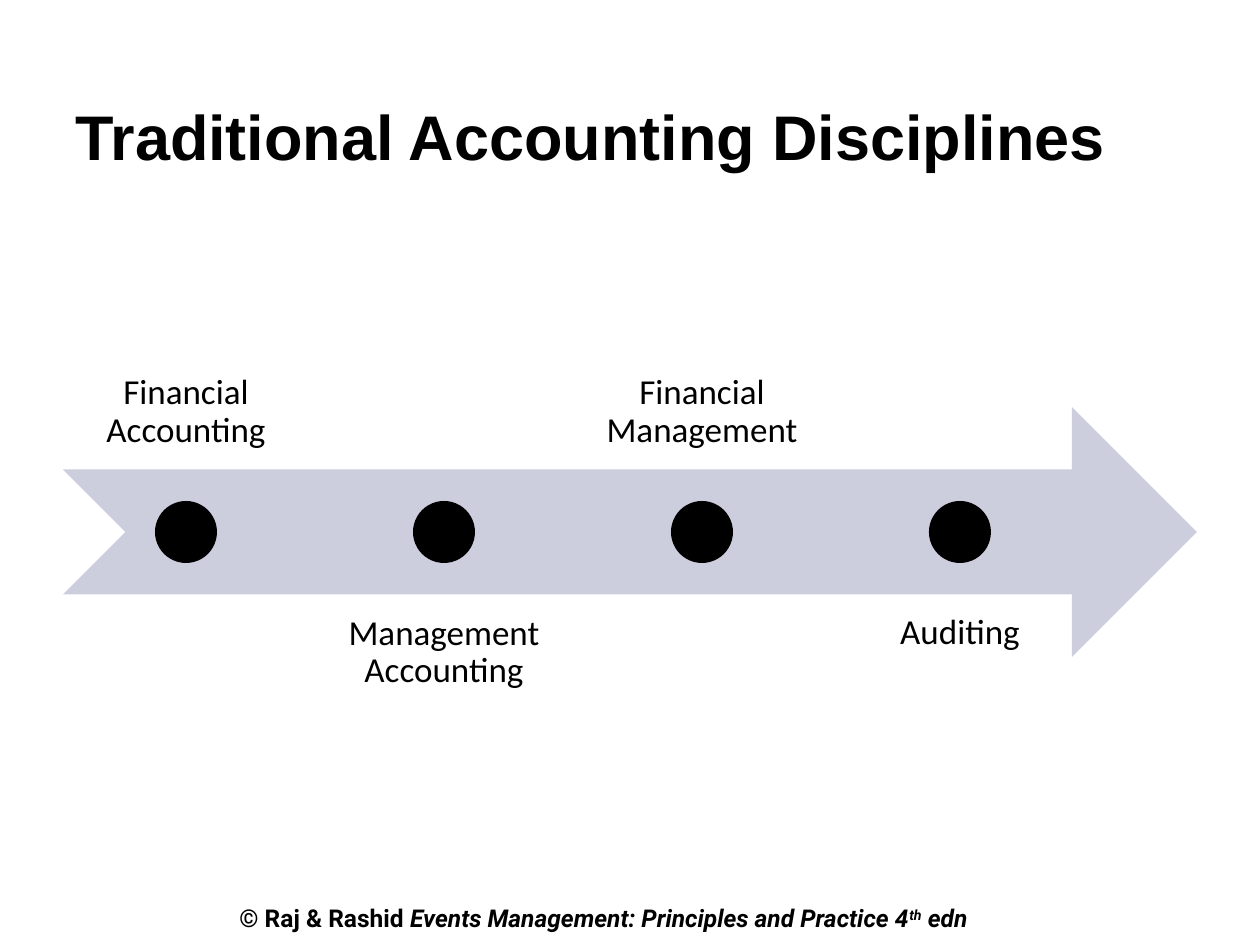
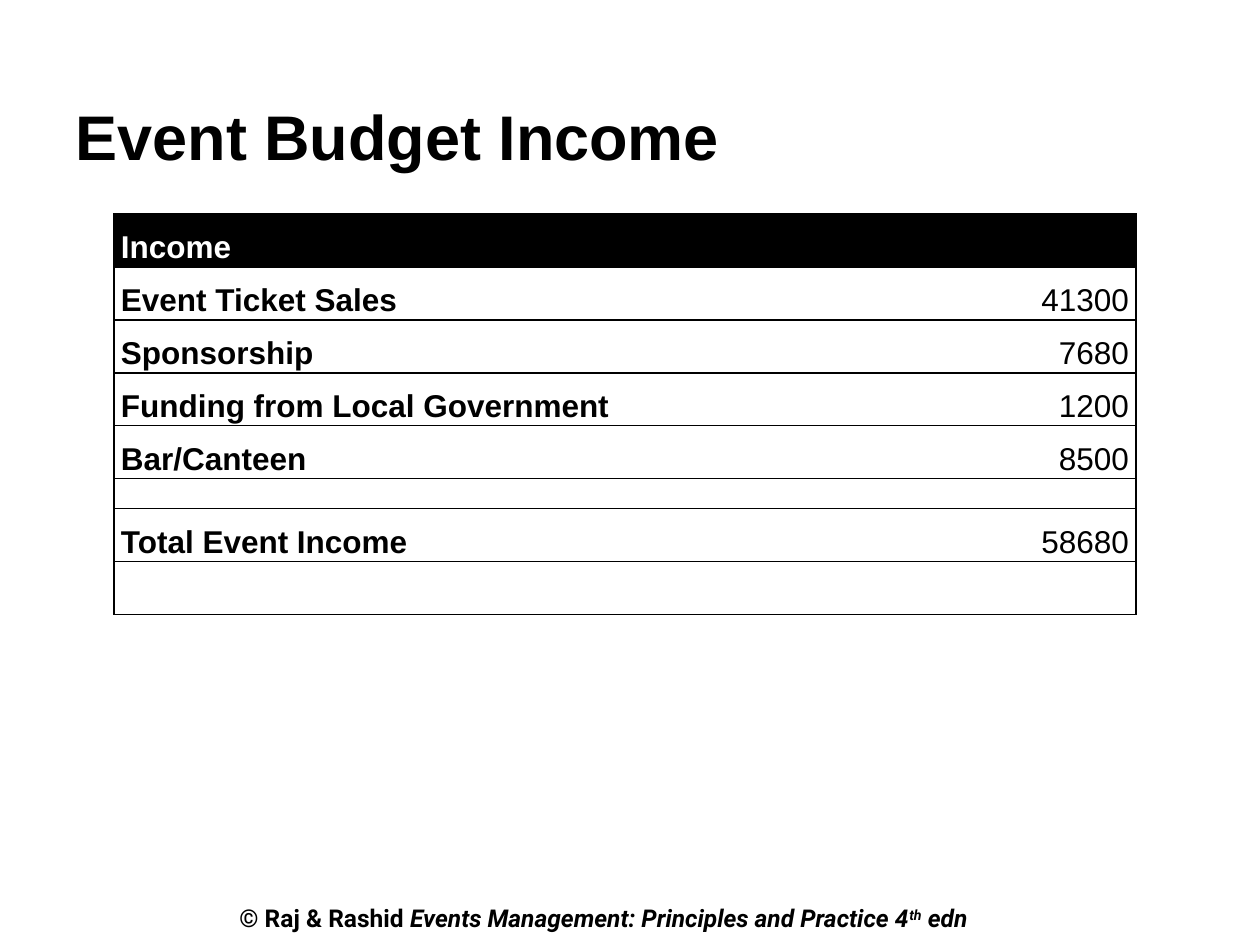
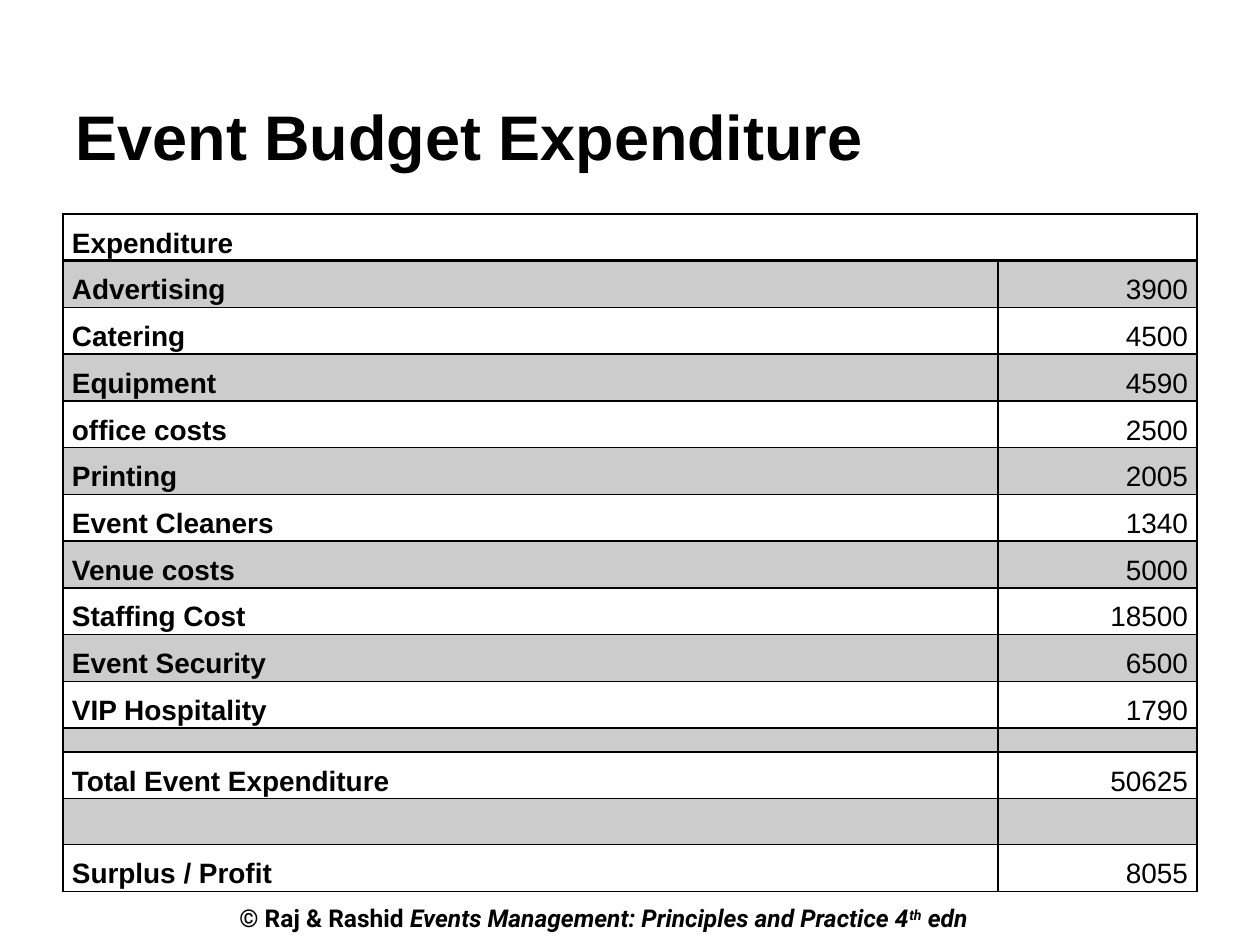
import lxml.etree
import pptx
import pptx.dml.color
import pptx.enum.shapes
import pptx.enum.text
import pptx.oxml.ns
import pptx.util

BLACK = pptx.dml.color.RGBColor(0x00, 0x00, 0x00)
WHITE = pptx.dml.color.RGBColor(0xFF, 0xFF, 0xFF)
GREY = pptx.dml.color.RGBColor(0xCC, 0xCC, 0xCC)
LAVENDER = pptx.dml.color.RGBColor(0xCC, 0xCD, 0xDD)

ALIGN = pptx.enum.text.PP_ALIGN
ANCHOR = pptx.enum.text.MSO_ANCHOR
SHAPE = pptx.enum.shapes.MSO_SHAPE
EMU_PER_PX = 914400 / 126

DISCIPLINES = [
    "Financial Accounting",
    "Management Accounting",
    "Financial Management",
    "Auditing",
]
INCOME = [
    ("Income", ""),
    ("Event Ticket Sales", "41300"),
    ("Sponsorship", "7680"),
    ("Funding from Local Government", "1200"),
    ("Bar/Canteen", "8500"),
    ("", ""),
    ("Total Event Income", "58680"),
    ("", ""),
]
EXPENDITURE = [
    ("Expenditure", ""),
    ("Advertising", "3900"),
    ("Catering", "4500"),
    ("Equipment", "4590"),
    ("office costs", "2500"),
    ("Printing", "2005"),
    ("Event Cleaners", "1340"),
    ("Venue costs", "5000"),
    ("Staffing Cost", "18500"),
    ("Event Security", "6500"),
    ("VIP Hospitality", "1790"),
    ("", ""),
    ("Total Event Expenditure", "50625"),
    ("", ""),
    ("Surplus / Profit", "8055"),
]


def px(length):
    return pptx.util.Emu(round(length * EMU_PER_PX))


def box(left, top, width, height):
    return px(left), px(top), px(width), px(height)


def write(paragraph, text, size=18, font="Arial", color=BLACK, bold=False,
          italic=False, raised=False, align=ALIGN.LEFT, spacing=None):
    paragraph.alignment = align
    if spacing:
        paragraph.line_spacing = spacing
    run = paragraph.add_run()
    run.text = text
    run.font.size = pptx.util.Pt(size)
    run.font.name = font
    run.font.color.rgb = color
    run.font.bold = bold
    run.font.italic = italic
    if raised:
        run.font._element.set("baseline", "30000")


def add_footer(slide):
    frame = slide.shapes.add_textbox(*box(227, 897, 878, 43)).text_frame
    frame.word_wrap = False
    paragraph = frame.paragraphs[0]
    style = {"size": 14, "font": "Roboto", "bold": True}
    write(paragraph, "© Raj & Rashid ", **style)
    write(paragraph, "Events Management: Principles and Practice 4", italic=True, **style)
    write(paragraph, "th", italic=True, raised=True, **style)
    write(paragraph, " edn", italic=True, **style)


def add_slide(presentation, title):
    slide = presentation.slides.add_slide(presentation.slide_layouts[5])
    shape = slide.shapes.title
    shape.left, shape.top, shape.width, shape.height = box(63, 92, 1134, 132)
    frame = shape.text_frame
    frame.auto_size = pptx.enum.text.MSO_AUTO_SIZE.NONE
    frame.vertical_anchor = ANCHOR.TOP
    frame.margin_top = px(5)
    write(frame.paragraphs[0], title, size=36, bold=True)
    add_footer(slide)
    return slide


def add_filled_shape(slide, kind, color, *place):
    shape = slide.shapes.add_shape(kind, *box(*place))
    shape.shadow.inherit = False
    shape.fill.solid()
    shape.fill.fore_color.rgb = color
    shape.line.fill.background()


def add_label(slide, text, left, top, anchor):
    frame = slide.shapes.add_textbox(*box(left, top, 246, 250)).text_frame
    frame.word_wrap = True
    frame.vertical_anchor = anchor
    frame.margin_left = frame.margin_right = px(20)
    frame.margin_top = frame.margin_bottom = px(20)
    write(frame.paragraphs[0], text, size=20, font="Calibri",
          align=ALIGN.CENTER, spacing=0.9)


def add_timeline(slide, labels):
    add_filled_shape(slide, SHAPE.NOTCHED_RIGHT_ARROW, LAVENDER, 63, 407, 1134, 250)
    for index, text in enumerate(labels):
        offset = 258 * index
        if index % 2:
            add_label(slide, text, 63 + offset, 595, ANCHOR.TOP)
        else:
            add_label(slide, text, 63 + offset, 220, ANCHOR.BOTTOM)
        add_filled_shape(slide, SHAPE.OVAL, BLACK, 155 + offset, 501, 62, 62)


def set_borders(cell, widths):
    properties = cell._tc.get_or_add_tcPr()
    qn = pptx.oxml.ns.qn
    for side in "LRTB":
        width = widths[side]
        line = lxml.etree.SubElement(properties, qn(f"a:ln{side}"))
        line.set("w", str(pptx.util.Pt(width)))
        if width:
            fill = lxml.etree.SubElement(line, qn("a:solidFill"))
            lxml.etree.SubElement(fill, qn("a:srgbClr"), val=str(BLACK))
        else:
            lxml.etree.SubElement(line, qn("a:noFill"))


def fill_cell(cell, text, fill, margin, **style):
    cell.fill.solid()
    cell.fill.fore_color.rgb = fill
    cell.vertical_anchor = ANCHOR.MIDDLE
    cell.margin_left = cell.margin_right = px(margin)
    cell.margin_top = cell.margin_bottom = 0
    paragraph = cell.text_frame.paragraphs[0]
    if text:
        write(paragraph, text, spacing=1.39, **style)
    else:
        end = pptx.oxml.ns.qn("a:endParaRPr")
        lxml.etree.SubElement(paragraph._p, end, sz="800")


def add_budget(slide, entries, left, columns, row_height, spacer_height, size,
               margin, line, divider, header_line, header_fill, header_color, band):
    spacer = entries.index(("", ""))
    heights = [spacer_height if row == spacer else row_height
               for row in range(len(entries))]
    place = box(left, 214, sum(columns), sum(heights))
    table = slide.shapes.add_table(len(entries), 2, *place).table
    table.first_row = False
    table.horz_banding = False
    for column, width in zip(table.columns, columns):
        column.width = px(width)
    for row, (entry, height) in enumerate(zip(entries, heights)):
        table.rows[row].height = px(height)
        header = row == 0
        fill = header_fill if header else band if row % 2 else WHITE
        inner = line if header else divider
        for column, text in enumerate(entry):
            cell = table.cell(row, column)
            set_borders(cell, {
                "L": inner if column else line,
                "R": line if column else inner,
                "T": header_line if row == 1 else line,
                "B": header_line if header else line,
            })
            fill_cell(cell, text, fill, margin, size=size,
                      color=header_color if header else BLACK,
                      bold=column == 0,
                      align=ALIGN.RIGHT if column else ALIGN.LEFT)
    table.cell(0, 0).merge(table.cell(0, 1))


def main():
    presentation = pptx.Presentation()
    presentation.slide_width = px(1260)
    presentation.slide_height = px(945)

    add_timeline(add_slide(presentation, "Traditional Accounting Disciplines"), DISCIPLINES)
    add_budget(add_slide(presentation, "Event Budget Income"), INCOME,
               left=114, columns=(843, 179), row_height=53, spacer_height=30,
               size=18, margin=7, line=0.75, divider=0, header_line=0.75,
               header_fill=BLACK, header_color=WHITE, band=WHITE)
    add_budget(add_slide(presentation, "Event Budget Expenditure"), EXPENDITURE,
               left=63, columns=(935, 199), row_height=46, spacer_height=24,
               size=16, margin=9, line=1, divider=0.75, header_line=2,
               header_fill=WHITE, header_color=BLACK, band=GREY)

    presentation.save("out.pptx")


if __name__ == "__main__":
    main()
